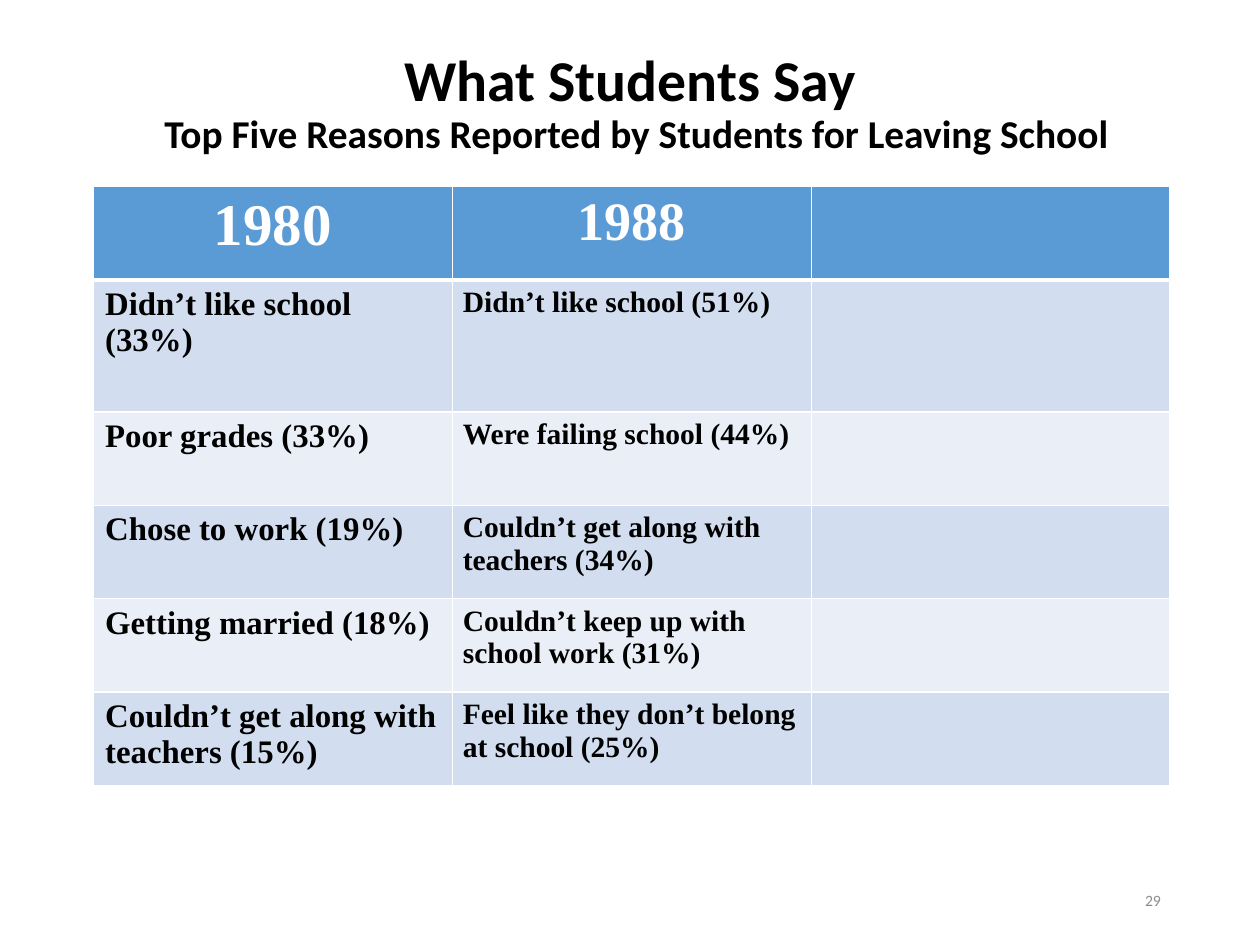
from typing import NamedTuple

from lxml import etree
from pptx import Presentation
from pptx.dml.color import RGBColor
from pptx.enum import text
from pptx.oxml import ns
from pptx.util import Inches, Pt

BLACK, WHITE, GREY = "000000", "FFFFFF", "8C8C8C"
HEADER_FILL, BAND_FILLS = "5B9BD5", ("D2DEEF", "EAEFF7")
SANS, SERIF = "Calibri", "Times New Roman"


class Style(NamedTuple):
    size: float
    color: str
    font: str
    bold: bool = True


class Column(NamedTuple):
    texts: tuple[str, ...]
    header_size: float
    body_size: float
    side_margin: float


COLUMNS = (
    Column(("1980", "Didn’t like school (33%)", "Poor grades (33%)",
            "Chose to work (19%)", "Getting married (18%)",
            "Couldn’t get along with teachers (15%)"), 36, 20, 0.1),
    Column(("1988", "Didn’t like school (51%)", "Were failing school (44%)",
            "Couldn’t get along with teachers (34%)",
            "Couldn’t keep up with school work (31%)",
            "Feel like they don’t belong at school (25%)"), 33, 18, 0.09),
    Column(("",) * 6, 33, 18, 0.1),
)
COLUMN_WIDTH = 3.04
ROW_HEIGHTS = (0.79, 1.12, 0.79, 0.79, 0.79, 0.79)


def rgb(color: str) -> RGBColor:
    return RGBColor.from_string(color)


def add_span(para, words: str, style: Style) -> None:
    span = para.add_run()
    span.text = words
    span.font.size = Pt(style.size)
    span.font.name = style.font
    span.font.bold = style.bold
    span.font.color.rgb = rgb(style.color)


def add_text_box(page, left: float, top: float, width: float, height: float, align):
    """Add a middle-anchored box and return its first paragraph."""
    box = page.shapes.add_textbox(Inches(left), Inches(top), Inches(width), Inches(height))
    frame = box.text_frame
    frame.word_wrap = True
    frame.vertical_anchor = text.MSO_ANCHOR.MIDDLE
    para = frame.paragraphs[0]
    para.alignment = align
    return para


def set_borders(cell, bottom_width: float) -> None:
    properties = cell._tc.get_or_add_tcPr()
    widths = {"a:lnL": 1, "a:lnR": 1, "a:lnT": 1, "a:lnB": bottom_width}
    for position, (tag, width) in enumerate(widths.items()):
        line = etree.Element(ns.qn(tag), w=str(Pt(width)))
        fill = etree.SubElement(line, ns.qn("a:solidFill"))
        etree.SubElement(fill, ns.qn("a:srgbClr"), val=WHITE)
        properties.insert(position, line)


def fill_cell(cell, column: Column, row: int) -> None:
    header = row == 0
    cell.margin_left = cell.margin_right = Inches(column.side_margin)
    cell.margin_top = cell.margin_bottom = Inches(0.05)
    cell.fill.solid()
    cell.fill.fore_color.rgb = rgb(HEADER_FILL if header else BAND_FILLS[(row - 1) % 2])
    set_borders(cell, 3 if header or row == 0 else 1)
    if not column.texts[row]:
        return
    para = cell.text_frame.paragraphs[0]
    if header:
        para.alignment = text.PP_ALIGN.CENTER
        style = Style(column.header_size, WHITE, SERIF)
    else:
        style = Style(column.body_size, BLACK, SERIF)
    add_span(para, column.texts[row], style)


def add_reasons_table(page) -> None:
    table = page.shapes.add_table(
        len(ROW_HEIGHTS), len(COLUMNS), Inches(0.79), Inches(1.58),
        Inches(COLUMN_WIDTH * len(COLUMNS)), Inches(sum(ROW_HEIGHTS))).table
    for row, height in enumerate(ROW_HEIGHTS):
        table.rows[row].height = Inches(height)
    for index, column in enumerate(COLUMNS):
        table.columns[index].width = Inches(COLUMN_WIDTH)
        for row in range(len(ROW_HEIGHTS)):
            fill_cell(table.cell(row, index), column, row)


def main() -> None:
    deck = Presentation()
    deck.slide_width, deck.slide_height = Inches(10.67), Inches(8)
    page = deck.slides.add_slide(deck.slide_layouts[6])

    title = add_text_box(page, 0.6, 0.22, 9.58, 1.33, text.PP_ALIGN.CENTER)
    title.line_spacing = 0.9
    add_span(title, "What Students Say ", Style(35.2, BLACK, SANS))
    title.add_line_break()
    add_span(title, "Top Five Reasons Reported by Students for Leaving School",
             Style(24, BLACK, SANS))

    add_reasons_table(page)

    number = add_text_box(page, 7.53, 7.41, 2.4, 0.43, text.PP_ALIGN.RIGHT)
    add_span(number, "29", Style(9.6, GREY, SANS, bold=False))
    deck.save("out.pptx")


if __name__ == "__main__":
    main()
